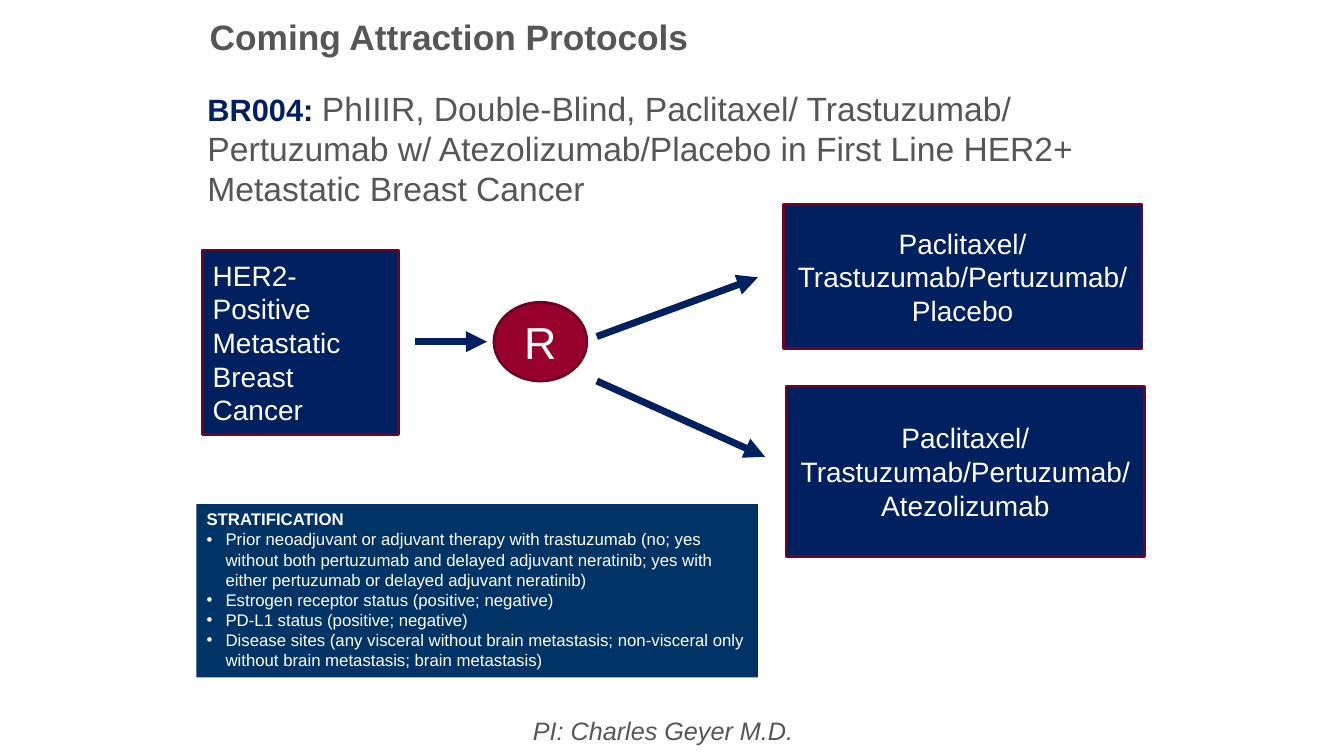
"""Build a trial schema slide for the BR004 protocol."""
from lxml.etree import SubElement
from pptx import Presentation
from pptx.dml.color import RGBColor
from pptx.enum.shapes import MSO_CONNECTOR, MSO_SHAPE
from pptx.enum.text import MSO_ANCHOR, MSO_AUTO_SIZE, PP_ALIGN
from pptx.oxml.ns import qn
from pptx.util import Cm, Pt

NAVY = RGBColor(0x00, 0x20, 0x60)
BLUE = RGBColor(0x00, 0x33, 0x66)
CRIMSON = RGBColor(0x98, 0x01, 0x2E)
MAROON = RGBColor(0x70, 0x01, 0x22)
GREY = RGBColor(0x56, 0x56, 0x56)
WHITE = RGBColor(0xFF, 0xFF, 0xFF)

STRATA = [
    "Prior neoadjuvant or adjuvant therapy with trastuzumab (no; yes without both "
    "pertuzumab and delayed adjuvant neratinib; yes with either pertuzumab or "
    "delayed adjuvant neratinib)",
    "Estrogen receptor status (positive; negative)",
    "PD-L1 status (positive; negative)",
    "Disease sites (any visceral without brain metastasis; non-visceral only "
    "without brain metastasis; brain metastasis)",
]


def add_run(p, text, size, color, **fmt):
    r = p.add_run()
    r.text = text
    for name, value in {"name": "Arial", "size": Pt(size), "bold": False, **fmt}.items():
        setattr(r.font, name, value)
    r.font.color.rgb = color


def format_frame(tf, **fmt):
    defaults = {"word_wrap": True, "auto_size": MSO_AUTO_SIZE.NONE,
                "vertical_anchor": MSO_ANCHOR.TOP}
    for name, value in {**defaults, **fmt}.items():
        setattr(tf, name, value)
    return tf


def place(sp, box):
    for name, value in zip(("left", "top", "width", "height"), box):
        setattr(sp, name, Cm(value))


def add_text(s, box, **fmt):
    sp = s.shapes.add_textbox(*map(Cm, box))
    return format_frame(sp.text_frame, **fmt).paragraphs[0]


def add_node(s, kind, box, text, size=20, fill=NAVY, align=PP_ALIGN.CENTER):
    sp = s.shapes.add_shape(kind, *map(Cm, box))
    sp.shadow.inherit = False
    sp.fill.solid()
    sp.fill.fore_color.rgb = fill
    sp.line.color.rgb = MAROON
    sp.line.width = Pt(2)
    p = format_frame(sp.text_frame, vertical_anchor=MSO_ANCHOR.MIDDLE).paragraphs[0]
    p.alignment = align
    add_run(p, text, size, WHITE)


def add_arrow(s, *ends):
    cxn = s.shapes.add_connector(MSO_CONNECTOR.STRAIGHT, *map(Cm, ends))
    cxn.line.color.rgb = NAVY
    cxn.line.width = Pt(5)
    SubElement(cxn.line._get_or_add_ln(), qn("a:tailEnd"), type="triangle")
    SubElement(cxn._element.spPr, qn("a:effectLst"))


def set_bullet(p, char=None):
    pPr = p._p.get_or_add_pPr()
    indent = Cm(0.48) if char else 0
    pPr.set("marL", str(indent))
    pPr.set("indent", str(-indent))
    if char:
        SubElement(pPr, qn("a:buFont"), typeface="Arial")
        SubElement(pPr, qn("a:buChar"), char=char)
    else:
        SubElement(pPr, qn("a:buNone"))


def fill_strata(sp):
    place(sp, (4.95, 12.7, 14.15, 4.37))
    sp.fill.solid()
    sp.fill.fore_color.rgb = BLUE
    tf = format_frame(sp.text_frame)
    for i, text in enumerate(["STRATIFICATION", *STRATA]):
        p = tf.add_paragraph() if i else tf.paragraphs[0]
        set_bullet(p, "•" if i else None)
        p.space_before = Pt(0)
        add_run(p, text, 12, WHITE, bold=i == 0)


def main():
    prs = Presentation()
    prs.slide_width, prs.slide_height = Cm(33.87), Cm(19.05)
    s = prs.slides.add_slide(prs.slide_layouts[1])

    title, body = s.placeholders
    place(title, (5.03, 0.25, 22.86, 2.29))
    p = format_frame(title.text_frame).paragraphs[0]
    p.alignment = PP_ALIGN.LEFT
    add_run(p, "Coming Attraction Protocols", 25.2, GREY, bold=True)

    p = add_text(s, (4.98, 2.08, 22.33, 3.1))
    add_run(p, "BR004: ", 22, NAVY, bold=True)
    add_run(p, "PhIIIR, Double‐Blind, Paclitaxel/ Trastuzumab/ Pertuzumab w/ "
            "Atezolizumab/Placebo in First Line HER2+ Metastatic Breast Cancer", 24, GREY)

    add_node(s, MSO_SHAPE.RECTANGLE, (5.11, 6.3, 4.93, 4.65),
             "HER2-Positive Metastatic Breast Cancer", align=PP_ALIGN.LEFT)
    add_node(s, MSO_SHAPE.OVAL, (12.45, 7.62, 2.34, 1.98), "R", 32, CRIMSON)
    for box, drug in [((19.74, 5.16, 9.04, 3.63), "Placebo"),
                      ((19.81, 9.73, 9.04, 4.29), "Atezolizumab")]:
        add_node(s, MSO_SHAPE.RECTANGLE, box, f"Paclitaxel/ Trastuzumab/Pertuzumab/ {drug}")

    for ends in [(10.46, 8.61, 12.27, 8.61), (15.04, 8.48, 19.1, 6.99),
                 (15.04, 9.6, 19.28, 11.51)]:
        add_arrow(s, *ends)

    fill_strata(body)
    p = add_text(s, (13.18, 17.91, 7.14, 1.02), word_wrap=False)
    add_run(p, "PI: Charles Geyer M.D.", 18, GREY, italic=True)
    prs.save("out.pptx")


if __name__ == "__main__":
    main()
